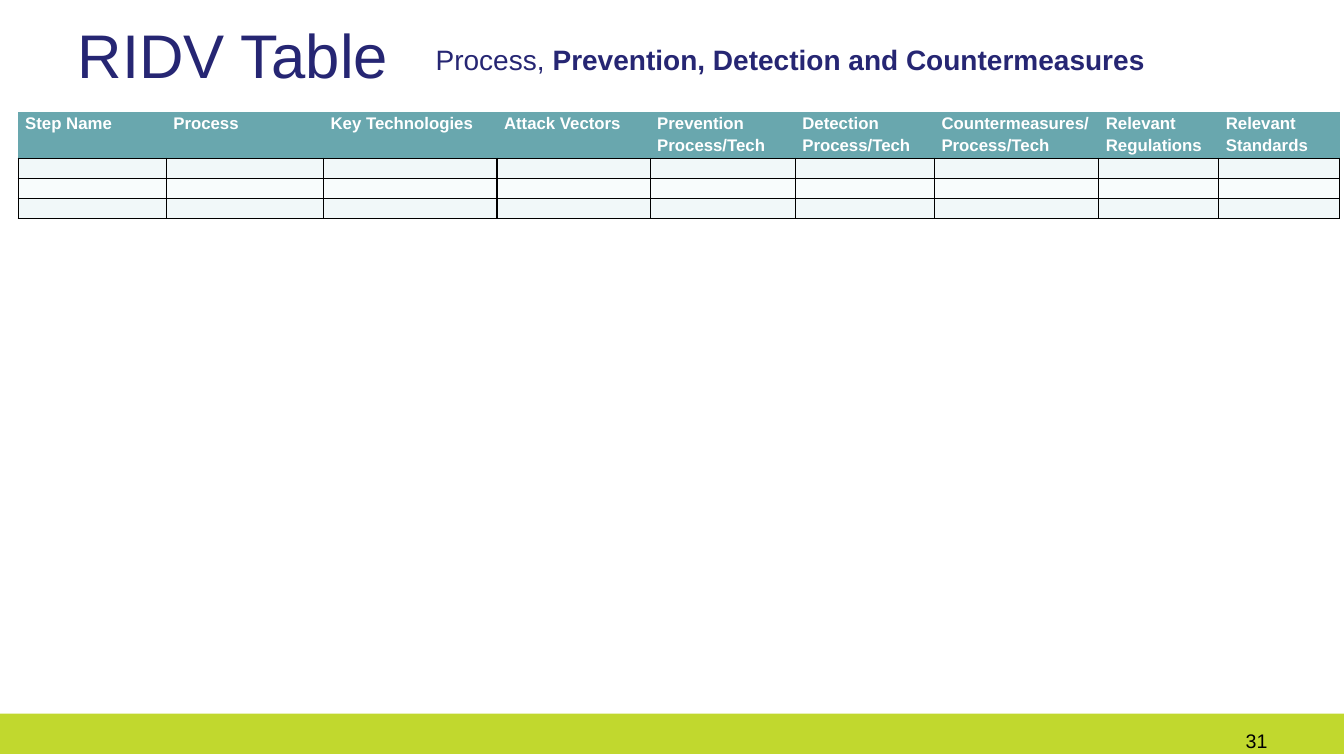
from dataclasses import dataclass

from lxml.etree import SubElement
from pptx import Presentation
from pptx.dml.color import RGBColor
from pptx.enum.shapes import MSO_SHAPE
from pptx.enum.text import MSO_ANCHOR, MSO_AUTO_SIZE, PP_ALIGN
from pptx.oxml.ns import qn
from pptx.util import Inches, Pt


@dataclass(frozen=True)
class Theme:
    font: str = "Arial"
    navy: str = "262673"
    lime: str = "C1D82E"
    teal: str = "69A7AE"
    bands: tuple = ("F1F8F9", "F8FCFC")
    white: str = "FFFFFF"
    black: str = "000000"
    title_size: int = 44
    subtitle_size: int = 20
    table_size: int = 12
    number_size: int = 14
    border: float = 1


THEME = Theme()
SLIDE_SIZE = (13.33, 7.5)

# Column heading and width in inches
COLUMNS = [
    ("Step Name", 1.47),
    ("Process", 1.56),
    ("Key Technologies", 1.72),
    ("Attack Vectors", 1.52),
    ("Prevention Process/Tech", 1.44),
    ("Detection Process/Tech", 1.38),
    ("Countermeasures/Process/Tech", 1.63),
    ("Relevant Regulations", 1.19),
    ("Relevant Standards", 1.2),
]
EMPTY_ROWS = 3
HEADER_HEIGHT, ROW_HEIGHT = 0.42, 0.2


def place(part, box):
    part.left, part.top, part.width, part.height = map(Inches, box)


def style(run, size, color, bold=False):
    run.font.name = THEME.font
    run.font.size = Pt(size)
    run.font.bold = bold
    run.font.color.rgb = RGBColor.from_string(color)


def set_borders(cell, sides):
    """Rule the given sides of a cell and clear the others."""
    properties = cell._tc.get_or_add_tcPr()
    for side in "LRTB":
        line = SubElement(properties, qn(f"a:ln{side}"), w=str(Pt(THEME.border)))
        if side in sides:
            fill = SubElement(line, qn("a:solidFill"))
            SubElement(fill, qn("a:srgbClr"), val=THEME.black)
        else:
            SubElement(line, qn("a:noFill"))


def format_cell(cell, fill, sides):
    set_borders(cell, sides)
    cell.fill.solid()
    cell.fill.fore_color.rgb = RGBColor.from_string(fill)
    cell.margin_left = cell.margin_right = Inches(0.07)
    cell.margin_top = cell.margin_bottom = 0


def add_heading(slide, title_box, subtitle_box):
    # Title
    title = slide.shapes.title
    place(title, title_box)
    title.text_frame.text = "RIDV Table"
    title.text_frame.auto_size = MSO_AUTO_SIZE.NONE
    title.text_frame.vertical_anchor = MSO_ANCHOR.MIDDLE
    heading = title.text_frame.paragraphs[0]
    heading.alignment = PP_ALIGN.LEFT
    style(heading.runs[0], THEME.title_size, THEME.navy)

    # Subtitle, without a bullet
    subtitle = slide.placeholders[1]
    place(subtitle, subtitle_box)
    subtitle.text_frame.auto_size = MSO_AUTO_SIZE.NONE
    topics = subtitle.text_frame.paragraphs[0]
    topics.space_before = Pt(0)
    properties = topics._p.get_or_add_pPr()
    properties.set("marL", "0")
    properties.set("indent", "0")
    SubElement(properties, qn("a:buNone"))
    for words, bold in (("Process, ", False),
                        ("Prevention, Detection and Countermeasures", True)):
        run = topics.add_run()
        run.text = words
        style(run, THEME.subtitle_size, THEME.navy, bold)


def add_process_table(slide, left, top):
    width = sum(column_width for _, column_width in COLUMNS)
    height = HEADER_HEIGHT + EMPTY_ROWS * ROW_HEIGHT
    table = slide.shapes.add_table(
        EMPTY_ROWS + 1, len(COLUMNS), *map(Inches, (left, top, width, height))
    ).table
    table.horz_banding = False

    for row in table.rows:
        row.height = Inches(ROW_HEIGHT)
    table.rows[0].height = Inches(HEADER_HEIGHT)

    for index, (name, column_width) in enumerate(COLUMNS):
        table.columns[index].width = Inches(column_width)

        # Header cell
        header = table.cell(0, index)
        format_cell(header, THEME.teal, "B")
        header.text_frame.text = name
        label = header.text_frame.paragraphs[0]
        label.line_spacing = 1.15
        style(label.runs[0], THEME.table_size, THEME.white, bold=True)

        # Empty cells in alternating tints
        for row in range(1, EMPTY_ROWS + 1):
            cell = table.cell(row, index)
            format_cell(cell, THEME.bands[(row - 1) % 2], "LRTB")
            SubElement(cell.text_frame.paragraphs[0]._p, qn("a:endParaRPr"),
                       sz=str(THEME.table_size * 100))


def add_footer(slide, band_box, number_box):
    # Colour band
    band = slide.shapes.add_shape(MSO_SHAPE.RECTANGLE, *map(Inches, band_box))
    band.shadow.inherit = False
    band.fill.solid()
    band.fill.fore_color.rgb = RGBColor.from_string(THEME.lime)
    band.line.fill.background()

    # Page number
    number = slide.shapes.add_textbox(*map(Inches, number_box)).text_frame
    number.word_wrap = True
    number.text = "31"
    number.paragraphs[0].alignment = PP_ALIGN.RIGHT
    style(number.paragraphs[0].runs[0], THEME.number_size, THEME.black)


def main():
    presentation = Presentation()
    presentation.slide_width, presentation.slide_height = map(Inches, SLIDE_SIZE)
    slide = presentation.slides.add_slide(presentation.slide_layouts[1])
    add_footer(slide, (-0.1, 7.08, 13.55, 0.4), (9.56, 7.18, 3.11, 0.31))
    add_heading(slide, (0.67, -0.09, 12, 1.25), (4.22, 0.37, 8, 0.54))
    add_process_table(slide, 0.18, 1.11)
    presentation.save("out.pptx")


if __name__ == "__main__":
    main()
